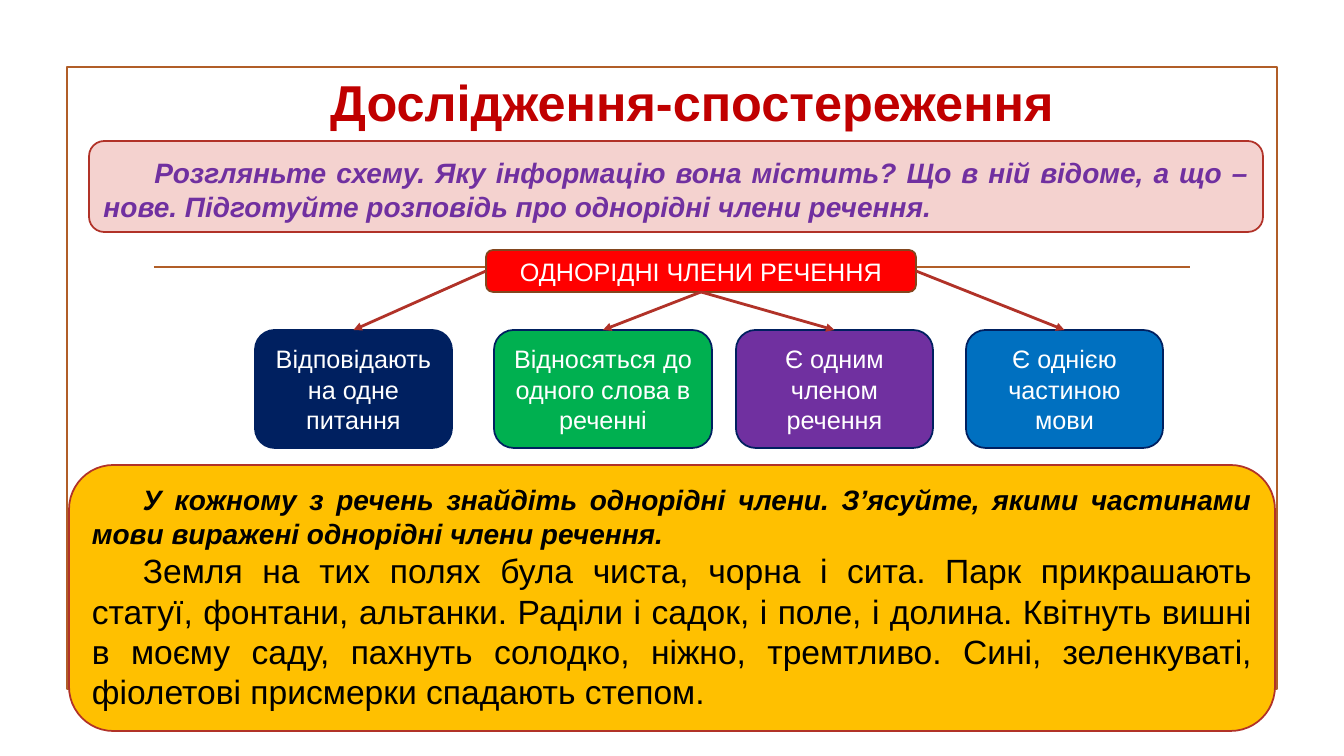
"""Build a slide with a scheme of homogeneous sentence members and a task."""
from dataclasses import dataclass
from typing import Any, NamedTuple

from lxml import etree
from pptx import Presentation
from pptx.dml.color import RGBColor
from pptx.enum.shapes import MSO_CONNECTOR, MSO_SHAPE
from pptx.enum.text import MSO_ANCHOR, MSO_AUTO_SIZE, PP_ALIGN
from pptx.oxml.ns import qn
from pptx.util import Emu, Pt

STRAIGHT = MSO_CONNECTOR.STRAIGHT
RECTANGLE, ROUNDED = MSO_SHAPE.RECTANGLE, MSO_SHAPE.ROUNDED_RECTANGLE
TOP, MIDDLE = MSO_ANCHOR.TOP, MSO_ANCHOR.MIDDLE
CENTER, JUSTIFY = PP_ALIGN.CENTER, PP_ALIGN.JUSTIFY
NO_AUTOFIT = MSO_AUTO_SIZE.NONE
SITE_TOP, SITE_LEFT, SITE_BOTTOM, SITE_RIGHT = range(4)

PAGE_WIDTH, PAGE_HEIGHT = 1344, 756
EMU_PER_PX = 12192000 / PAGE_WIDTH
FIRST_LINE_INDENT = 51


@dataclass(frozen=True)
class Theme:
    """Colours, font and sizes of the slide."""
    font: str = "Arial"
    frame: str = "B15E28"
    accent: str = "B13228"
    title: str = "C00000"
    pink: str = "F4D2CF"
    purple: str = "7030A0"
    red: str = "FF0000"
    brown: str = "83461E"
    navy: str = "002060"
    green: str = "00B050"
    blue: str = "0070C0"
    amber: str = "FFC000"
    white: str = "FFFFFF"
    black: str = "000000"
    title_size: int = 36
    story_size: int = 24
    prompt_size: int = 20
    label_size: int = 18
    outline: float = 1.25
    arrow: float = 2


THEME = Theme()


class Area(NamedTuple):
    """Left, top, width and height in px."""
    left: int
    top: int
    width: int
    height: int


class Span(NamedTuple):
    """One paragraph of text with its look."""
    text: str
    size: int
    color: str
    bold: bool = False
    italic: bool = False


class Card(NamedTuple):
    """One feature in the scheme and the site its arrow leaves."""
    text: str
    left: int
    width: int
    fill: str
    site: int


CARD_TOP, CARD_HEIGHT = 330, 118
CARDS = [
    Card("Відповідають на одне питання", 255, 197, THEME.navy, SITE_LEFT),
    Card("Відносяться до одного слова в реченні", 494, 218, THEME.green, SITE_BOTTOM),
    Card("Є одним членом речення", 736, 197, THEME.purple, SITE_BOTTOM),
    Card("Є однією частиною мови", 966, 197, THEME.blue, SITE_RIGHT),
]
TITLE = Span("Дослідження-спостереження", THEME.title_size, THEME.title, True)
PROMPT = Span(
    "Розгляньте схему. Яку інформацію вона містить? Що в ній відоме, а що – нове. "
    "Підготуйте розповідь про однорідні члени речення.",
    THEME.prompt_size, THEME.purple, True, True)
TASK = [
    Span("У кожному з речень знайдіть однорідні члени. З’ясуйте, якими частинами мови "
         "виражені однорідні члени речення.",
         THEME.prompt_size, THEME.black, True, True),
    Span("Земля на тих полях була чиста, чорна і сита. Парк прикрашають статуї, фонтани, "
         "альтанки. Раділи і садок, і поле, і долина. Квітнуть вишні в моєму саду, пахнуть "
         "солодко, ніжно, тремтливо. Сині, зеленкуваті, фіолетові присмерки спадають степом.",
         THEME.story_size, THEME.black),
]


def px(value: float) -> Emu:
    """Turn px into EMU."""
    return Emu(round(value * EMU_PER_PX))


def apply(target: Any, values: dict[str, Any]) -> None:
    """Set each named attribute on the target."""
    for name, value in values.items():
        setattr(target, name, value)


def place(box: Any, area: Area) -> None:
    """Move and size a box."""
    apply(box, {name: px(value) for name, value in area._asdict().items()})


def outline(line: Any, color: str, width: float) -> None:
    """Give a line its colour and width."""
    line.color.rgb = RGBColor.from_string(color)
    line.width = Pt(width)


def paint(box: Any, fill: str, line: str) -> None:
    """Fill and outline a box."""
    box.fill.solid()
    box.fill.fore_color.rgb = RGBColor.from_string(fill)
    outline(box.line, line, THEME.outline)


def write(box: Any, spans: list[Span], align: Any, anchor: Any, indent: int = 0) -> None:
    """Fill a box with one paragraph per span."""
    frame = box.text_frame
    apply(frame, {"word_wrap": True, "auto_size": NO_AUTOFIT, "vertical_anchor": anchor})
    for index, span in enumerate(spans):
        para = frame.add_paragraph() if index else frame.paragraphs[0]
        apply(para, {"alignment": align, "space_before": Pt(0), "space_after": Pt(0)})
        properties = para._p.get_or_add_pPr()
        properties.set("marL", "0")
        properties.set("indent", str(px(indent)))
        etree.SubElement(properties, qn("a:buNone"))
        run = para.add_run()
        run.text = span.text
        apply(run.font, {"name": THEME.font, "size": Pt(span.size),
                         "bold": span.bold, "italic": span.italic})
        run.font.color.rgb = RGBColor.from_string(span.color)


def add_rounded(page: Any, area: Area, fill: str, line: str) -> Any:
    """Add a rounded box."""
    box = page.shapes.add_shape(ROUNDED, *map(px, area))
    box.shadow.inherit = False
    paint(box, fill, line)
    return box


def add_line(page: Any, color: str, width: float, ends: tuple[int, ...] = (0, 0, 0, 0)) -> Any:
    """Add a straight line without shadow."""
    line = page.shapes.add_connector(STRAIGHT, *map(px, ends))
    outline(line.line, color, width)
    etree.SubElement(line._element.spPr, qn("a:effectLst"))
    return line


def add_arrow(page: Any, source: Any, site: int, target: Any) -> None:
    """Join a site of the source to the top of the target."""
    arrow = add_line(page, THEME.accent, THEME.arrow)
    arrow.begin_connect(source, site)
    arrow.end_connect(target, SITE_TOP)
    etree.SubElement(arrow.line._get_or_add_ln(), qn("a:tailEnd"), type="triangle")


def add_backdrop(page: Any) -> None:
    """Draw the page frame and the rule across it."""
    frame = page.shapes.add_shape(RECTANGLE, *map(px, Area(67, 67, 1210, 622)))
    frame.shadow.inherit = False
    frame.fill.background()
    outline(frame.line, THEME.frame, THEME.outline)
    add_line(page, THEME.frame, THEME.outline, (154, 267, 1190, 267))


def add_heading(page: Any) -> None:
    """Format the title and the prompt placeholders."""
    title, prompt = page.placeholders
    place(title, Area(163, 66, 1058, 71))
    write(title, [TITLE], CENTER, MIDDLE)
    place(prompt, Area(89, 141, 1174, 91))
    geometry = etree.SubElement(prompt._element.spPr, qn("a:prstGeom"), prst="roundRect")
    etree.SubElement(geometry, qn("a:avLst"))
    paint(prompt, THEME.pink, THEME.accent)
    write(prompt, [PROMPT], JUSTIFY, TOP, FIRST_LINE_INDENT)
    prompt.text_frame.margin_top = px(10)


def add_scheme(page: Any) -> None:
    """Draw the root, its cards and the arrows between them."""
    root = add_rounded(page, Area(486, 250, 430, 42), THEME.red, THEME.brown)
    write(root, [Span("ОДНОРІДНІ ЧЛЕНИ РЕЧЕННЯ", THEME.label_size, THEME.white)], CENTER, MIDDLE)
    for card in CARDS:
        area = Area(card.left, CARD_TOP, card.width, CARD_HEIGHT)
        box = add_rounded(page, area, card.fill, THEME.navy)
        write(box, [Span(card.text, THEME.label_size, THEME.white)], CENTER, MIDDLE)
        add_arrow(page, root, card.site, box)


def main() -> None:
    """Build and save the deck."""
    deck = Presentation()
    apply(deck, {"slide_width": px(PAGE_WIDTH), "slide_height": px(PAGE_HEIGHT)})
    page = deck.slides.add_slide(deck.slide_layouts[1])
    add_backdrop(page)
    add_heading(page)
    add_scheme(page)
    task = add_rounded(page, Area(69, 465, 1206, 266), THEME.amber, THEME.accent)
    write(task, TASK, JUSTIFY, TOP, FIRST_LINE_INDENT)
    deck.save("out.pptx")


if __name__ == "__main__":
    main()
